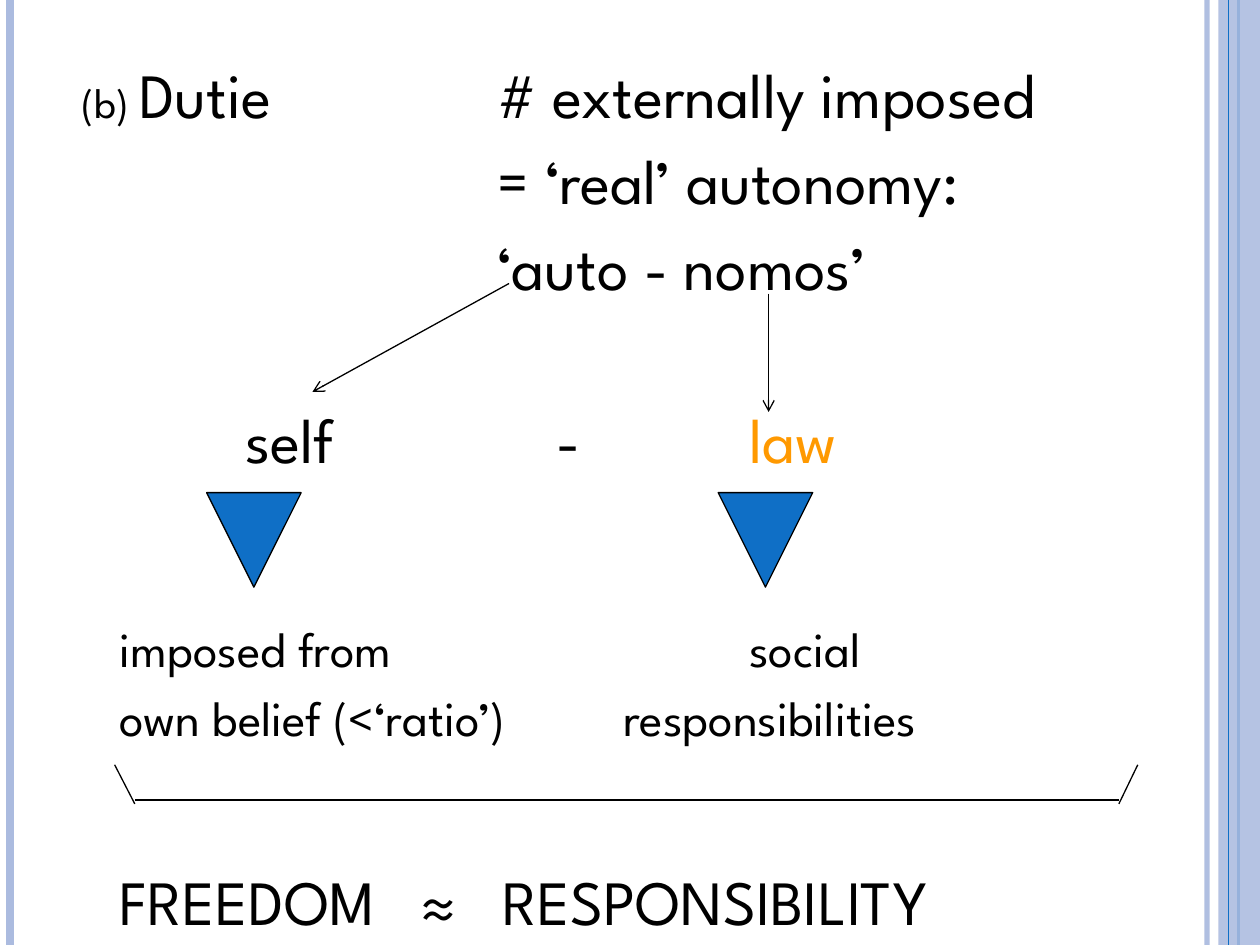
from lxml import etree
from pptx import Presentation
from pptx.dml.color import RGBColor
from pptx.enum.shapes import MSO_CONNECTOR, MSO_SHAPE
from pptx.oxml.ns import qn
from pptx.util import Inches, Pt

STRAIGHT = MSO_CONNECTOR.STRAIGHT
RECT = MSO_SHAPE.RECTANGLE
MERGE = MSO_SHAPE.FLOWCHART_MERGE
FONT = "League Spartan"
C = {"black": "000000", "blue": "0F6FC6", "pale": "ABBBDF", "orange": "FF9900"}

prs = Presentation()
prs.slide_width, prs.slide_height = Inches(10), Inches(7.5)
COLS, ROWS = 100, 75
COL, ROW = prs.slide_width / COLS, prs.slide_height / ROWS
s = prs.slides.add_slide(prs.slide_layouts[6])


def add_text(p, text, size=36, color="black"):
    r = p.add_run()
    r.text = text
    r.font.name, r.font.size = FONT, Pt(size)
    r.font.color.rgb = RGBColor.from_string(C[color])


def add_line(x1, y1, x2, y2, color="black", width=0.75, arrow=False):
    line = s.shapes.add_connector(
        STRAIGHT, int(x1 * COL), int(y1 * ROW), int(x2 * COL), int(y2 * ROW))
    line.line.color.rgb = RGBColor.from_string(C[color])
    line.line.width = Pt(width)
    sp_pr = line._element.spPr
    etree.SubElement(sp_pr, qn("a:effectLst"))
    if arrow:
        etree.SubElement(sp_pr.find(qn("a:ln")), qn("a:tailEnd"), type="arrow")
    return line


rule = add_line(95.8, 0, 95.8, ROWS, "pale", 3)
add_line(0.8, 0, 0.8, ROWS, "pale", 4.5)
add_line(98.3, 0, 98.3, ROWS, "blue", 1.5)
band = s.shapes.add_shape(RECT, int(96.7 * COL), 0, int(3.3 * COL), prs.slide_height)
band.shadow.inherit = False
band.fill.solid()
band.fill.fore_color.rgb = RGBColor.from_string(C["pale"])
band.line.fill.background()
add_line(97.5, 0, 97.5, ROWS, "blue")

for shape, opacity in ((rule, 93), (band, 87)):
    clr = shape._element.spPr.find(".//" + qn("a:srgbClr"))
    etree.SubElement(clr, qn("a:alpha"), val=str(opacity * 1000))

paragraphs = [
    (0, [33], [("(b) ", {"size": 24}), ("Dutie\t# externally imposed", {})]),
    (6, [33], [("\t= ‘real’ autonomy:", {})]),
    (6, [33], [("\t‘auto - nomos’", {})]),
    (55.7, [13, 37.7, 53], [("\tself\t-\t", {}), ("law", {"color": "orange"})]),
    (81, [3, 53], [("\timposed from\tsocial", {"size": 28})]),
    (6, [3, 43], [("\town belief (<‘ratio’)\tresponsibilities", {"size": 28})]),
    (66.6, [3, 26.9, 33.4], [("\tFREEDOM\t≈\tRESPONSIBILITY", {})]),
]
body = s.shapes.add_textbox(int(5.5 * COL), int(3.9 * ROW), int(90 * COL), int(71 * ROW))
tf = body.text_frame
tf.word_wrap = True
for i, (before, stops, runs) in enumerate(paragraphs):
    p = tf.add_paragraph() if i else tf.paragraphs[0]
    p.space_before = Pt(before)
    tabs = etree.SubElement(p._p.get_or_add_pPr(), qn("a:tabLst"))
    for stop in stops:
        etree.SubElement(tabs, qn("a:tab"), pos=str(int(stop * COL)), algn="l")
    for text, style in runs:
        add_text(p, text, **style)

for left in (16.4, 57):
    triangle = s.shapes.add_shape(
        MERGE, int(left * COL), int(39.1 * ROW), int(7.5 * COL), int(7.5 * ROW))
    triangle.shadow.inherit = False
    triangle.fill.solid()
    triangle.fill.fore_color.rgb = RGBColor.from_string(C["blue"])
    triangle.line.color.rgb = RGBColor.from_string(C["black"])
    triangle.line.width = Pt(0.75)

add_line(40.4, 22.5, 24.8, 31.1, arrow=True)
add_line(61, 23.3, 61, 32.7, arrow=True)
for inner, outer in ((10.7, 9.1), (88.8, 90.3)):
    add_line(inner, 63.8, outer, 60.7)
add_line(10.7, 63.5, 88.8, 63.5)

prs.save("out.pptx")
